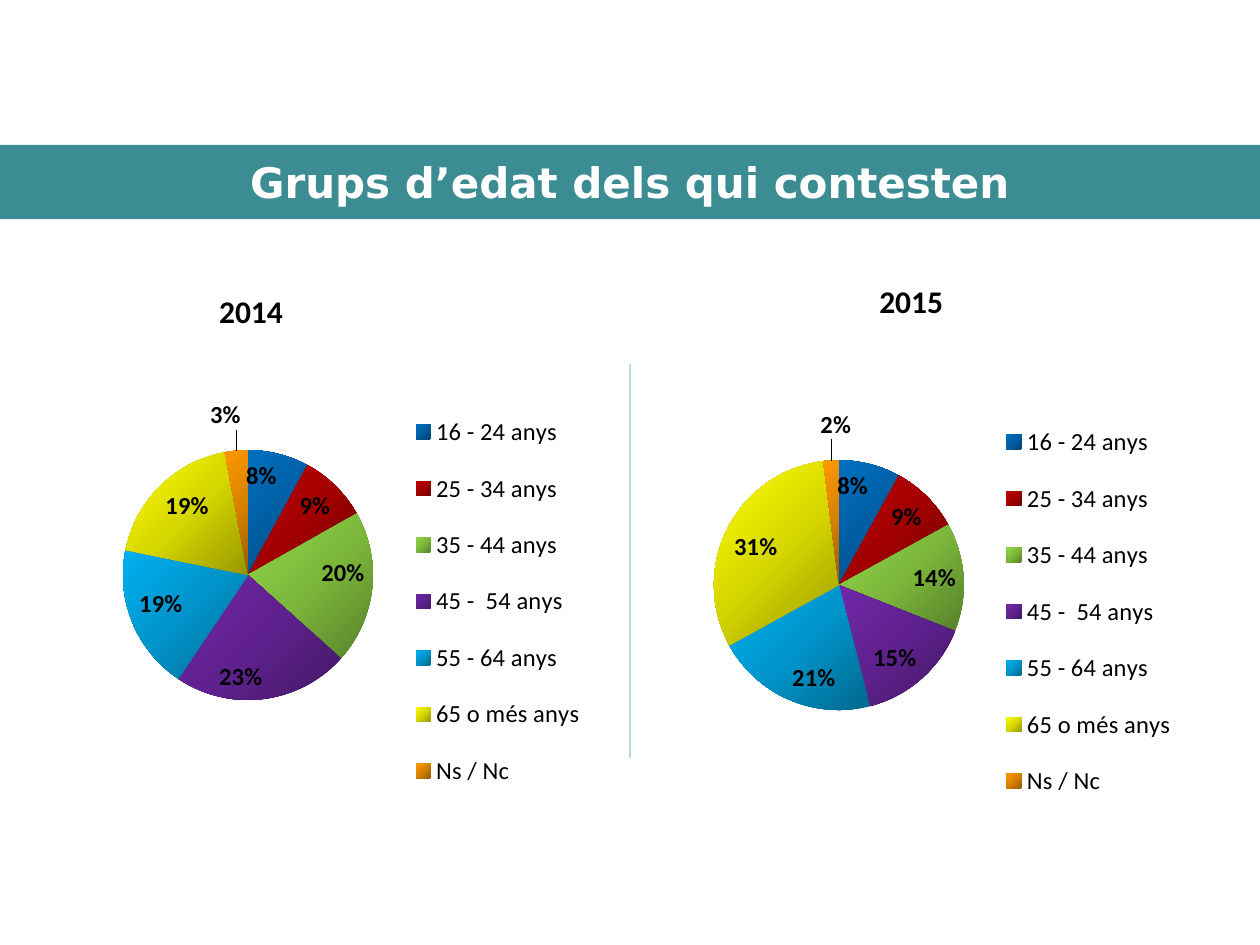
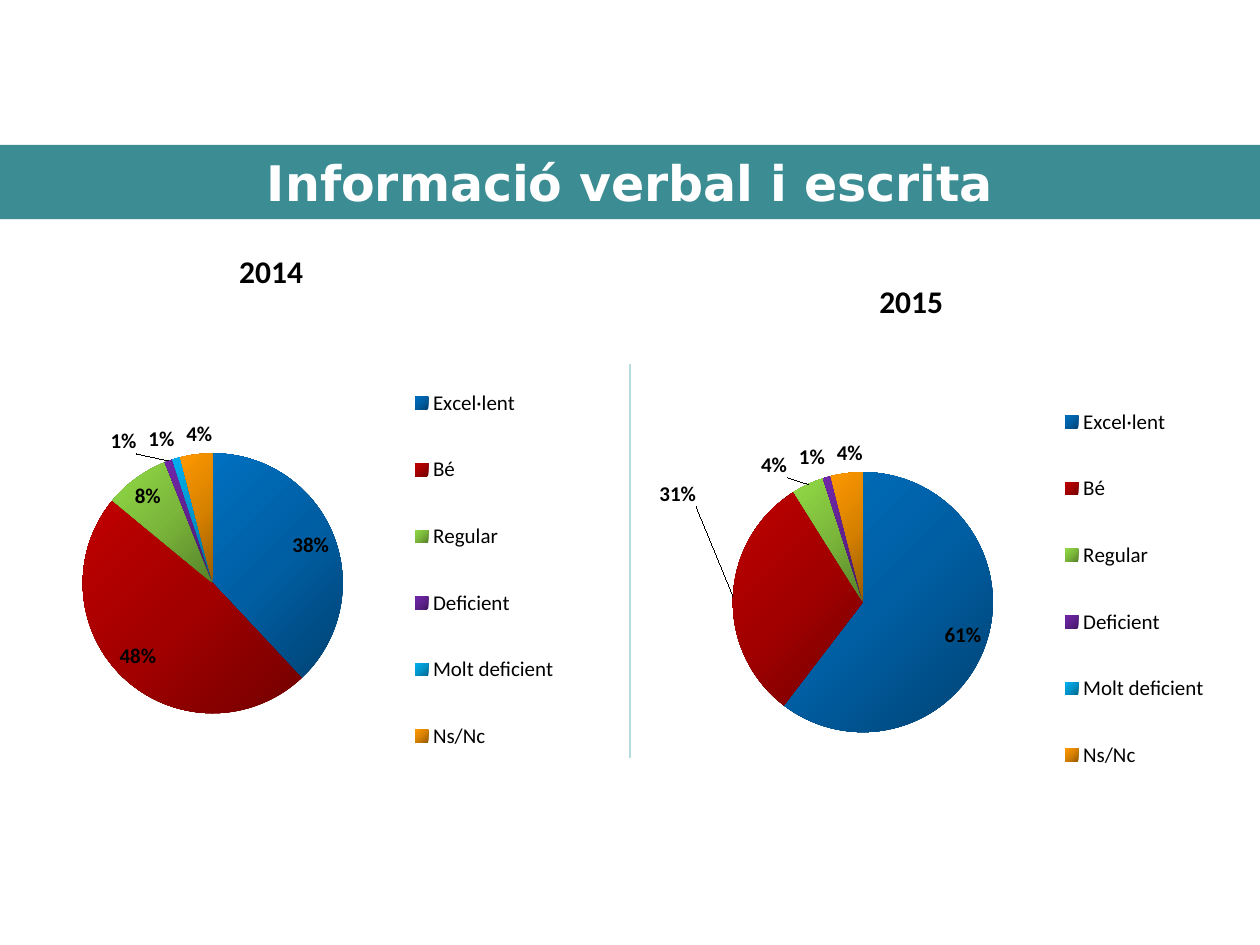
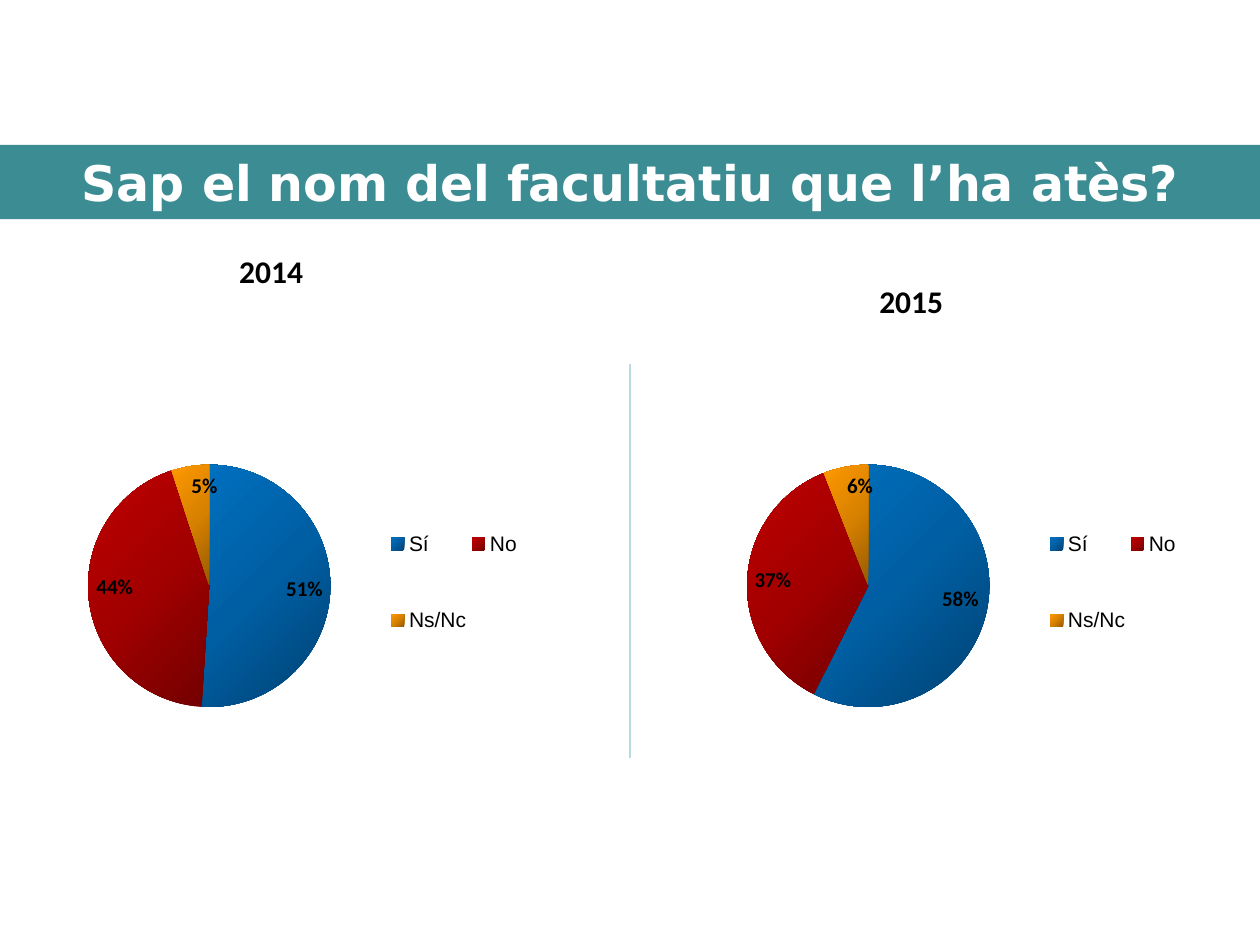
from copy import deepcopy

from pptx import Presentation
from pptx.chart.data import CategoryChartData
from pptx.dml.color import RGBColor
from pptx.enum.chart import XL_CHART_TYPE as CT, XL_LABEL_POSITION as LP, XL_LEGEND_POSITION
from pptx.enum.shapes import MSO_CONNECTOR
from pptx.enum.text import MSO_ANCHOR, MSO_AUTO_SIZE, PP_ALIGN
from pptx.oxml import parse_xml
from pptx.oxml.ns import nsdecls, qn
from pptx.util import Inches, Pt

TEAL = RGBColor(0x3C, 0x8C, 0x93)
PALE_TEAL = RGBColor(0xB6, 0xDC, 0xDF)
WHITE = RGBColor(0xFF, 0xFF, 0xFF)
BLACK = RGBColor(0, 0, 0)

# Slice gradients: dark, middle and light stop
BLUE = [RGBColor(0x00, 0x42, 0x72), RGBColor(0x00, 0x5E, 0xA2), RGBColor(0x00, 0x70, 0xC0)]
RED = [RGBColor(0x72, 0x00, 0x00), RGBColor(0xA2, 0x00, 0x00), RGBColor(0xC0, 0x00, 0x00)]
GREEN = [RGBColor(0x57, 0x81, 0x2A), RGBColor(0x7B, 0xB7, 0x3B), RGBColor(0x92, 0xDA, 0x46)]
PURPLE = [RGBColor(0x43, 0x17, 0x64), RGBColor(0x5F, 0x21, 0x8E), RGBColor(0x71, 0x28, 0xA8)]
SKY = [RGBColor(0x00, 0x68, 0x8E), RGBColor(0x00, 0x94, 0xCA), RGBColor(0x00, 0xB0, 0xF0)]
YELLOW = [RGBColor(0x97, 0x97, 0x00), RGBColor(0xD7, 0xD7, 0x00), RGBColor(0xFF, 0xFF, 0x00)]
ORANGE = [RGBColor(0x97, 0x5B, 0x00), RGBColor(0xD7, 0x81, 0x00), RGBColor(0xFF, 0x99, 0x00)]

SLIDES = [
    {
        "title": "Grups d’edat dels qui contesten",
        "title_size": 24,
        "categories": ["16 - 24 anys", "25 - 34 anys", "35 - 44 anys", "45 -  54 anys",
                       "55 - 64 anys", "65 o més anys", "Ns / Nc"],
        "colors": [BLUE, RED, GREEN, PURPLE, SKY, YELLOW, ORANGE],
        "chart_size": (4.22, 5.23),
        "plot": (0.12, 0.09, 0.47, 0.82),
        "legend": (0.66, 0.22, 0.33, 0.64),
        "legend_font": ("Calibri", 14),
        "label_size": 14,
        "label_position": LP.INSIDE_END,
        "years": [
            {"year": "2014", "year_at": (1.64, 2.27), "chart_at": (0.47, 1.95),
             "values": [8, 9, 20, 23, 19, 19, 3], "moved": {6: (0.01, -0.02)}},
            {"year": "2015", "year_at": (6.88, 2.19), "chart_at": (5.16, 2.03),
             "values": [8, 9, 14, 15, 21, 31, 2], "moved": {6: (0.01, -0.02)}},
        ],
    },
    {
        "title": "Informació verbal i escrita",
        "title_size": 28,
        "categories": ["Excel·lent", "Bé", "Regular", "Deficient", "Molt deficient", "Ns/Nc"],
        "colors": [BLUE, RED, GREEN, PURPLE, SKY, ORANGE],
        "chart_size": (4.69, 5.39),
        "plot": (0.14, 0.12, 0.44, 0.81),
        "legend": (0.69, 0.18, 0.26, 0.65),
        "legend_font": ("Calibri", 12),
        "label_size": 12,
        "label_position": LP.BEST_FIT,
        "years": [
            {"year": "2014", "year_at": (1.8, 1.95), "chart_at": (0, 1.8),
             "values": [38, 48, 8, 1, 1, 4], "moved": {}},
            {"year": "2015", "year_at": (6.88, 2.19), "chart_at": (5.16, 1.95),
             "values": [61, 31, 4, 1, None, 4], "moved": {1: (-0.05, -0.15)}},
        ],
    },
    {
        "title": "Sap el nom del facultatiu que l’ha atès?",
        "title_size": 28,
        "categories": ["Sí", "No", "Ns/Nc"],
        "colors": [BLUE, RED, ORANGE],
        "chart_size": (4.37, 5.7),
        "plot": (0.16, 0.06, 0.44, 0.88),
        "legend": (0.7, 0.35, 0.25, 0.29),
        "legend_font": ("Arial", 12),
        "label_size": 12,
        "label_position": LP.INSIDE_END,
        "years": [
            {"year": "2014", "year_at": (1.8, 1.95), "chart_at": (0, 1.8),
             "values": [51, 44, 5], "moved": {}},
            {"year": "2015", "year_at": (6.88, 2.19), "chart_at": (5.23, 1.8),
             "values": [58, 37, 6], "moved": {}},
        ],
    },
]


def set_font(font, name, size, color=BLACK, bold=False):
    for key, value in {"name": name, "size": Pt(size), "bold": bold}.items():
        setattr(font, key, value)
    font.color.rgb = color


def manual_layout(**values):
    """Return a c:layout element; values are fractions of the chart."""
    items = "".join(f'<c:{key} val="{value}"/>' for key, value in values.items())
    return parse_xml(f'<c:layout {nsdecls("c")}><c:manualLayout>{items}'
                     '</c:manualLayout></c:layout>')


def area_layout(area, **target):
    return manual_layout(**target, xMode="edge", yMode="edge", **dict(zip("xywh", area)))


def drop_layout(element):
    for old in element.findall(qn("c:layout")):
        element.remove(old)


class Deck:
    def __init__(self):
        self.prs = Presentation()
        self.prs.slide_width, self.prs.slide_height = Inches(10), Inches(7.5)
        self.s = None

    def add_slide(self, title, size):
        self.s = self.prs.slides.add_slide(self.prs.slide_layouts[5])
        sp = self.s.shapes.title
        sp.left, sp.top, sp.width, sp.height = map(Inches, (0, 1.15, 10, 0.59))
        sp.fill.solid()
        sp.fill.fore_color.rgb = TEAL
        tf = sp.text_frame
        tf.text = title
        tf.auto_size, tf.vertical_anchor = MSO_AUTO_SIZE.NONE, MSO_ANCHOR.MIDDLE
        p = tf.paragraphs[0]
        p.alignment = PP_ALIGN.CENTER
        set_font(p.runs[0].font, "DejaVu Sans", size, WHITE, True)

    def divider(self):
        line = self.s.shapes.add_connector(MSO_CONNECTOR.STRAIGHT, Inches(5), Inches(2.89),
                                           Inches(5), Inches(6.02))
        line.line.color.rgb = PALE_TEAL
        line.line.width = Pt(0.75)
        line.element.spPr.append(parse_xml(f'<a:effectLst {nsdecls("a")}/>'))

    def year(self, text, at):
        sp = self.s.shapes.add_textbox(*map(Inches, (*at, 1.48, 0.4)))
        tf = sp.text_frame
        tf.word_wrap = True
        tf.auto_size = MSO_AUTO_SIZE.SHAPE_TO_FIT_TEXT
        r = tf.paragraphs[0].add_run()
        r.text = text
        set_font(r.font, "Calibri", 18, bold=True)

    def pie(self, style, at, values, moved):
        data = CategoryChartData()
        data.categories = style["categories"]
        data.add_series("Series 1", values)
        box = map(Inches, (*at, *style["chart_size"]))
        chart = self.s.shapes.add_chart(CT.PIE, *box, data).chart
        chart.has_title = False
        set_font(chart.font, "Arial", 12)
        plot = chart.plots[0]
        plot.vary_by_categories = True
        area = chart.element.find(".//" + qn("c:plotArea"))
        drop_layout(area)
        area.insert(0, area_layout(style["plot"], layoutTarget="inner"))
        self.legend(chart, style)
        self.slices(chart, style["colors"])
        self.labels(plot.series[0], style, moved)

    def legend(self, chart, style):
        chart.has_legend = True
        chart.legend.position = XL_LEGEND_POSITION.RIGHT
        chart.legend.include_in_layout = False
        set_font(chart.legend.font, *style["legend_font"])
        legend = chart.element.find(".//" + qn("c:legend"))
        drop_layout(legend)
        legend.find(qn("c:overlay")).addprevious(area_layout(style["legend"]))

    def slices(self, chart, colors):
        for i, stops in enumerate(colors):
            fill = chart.plots[0].series[0].points[i].format.fill
            fill.gradient()
            fill.gradient_angle = 135
            stop_list = chart.element.findall(".//" + qn("a:gsLst"))[-1]
            stop_list.insert(1, deepcopy(stop_list[0]))
            for stop, color, position in zip(fill.gradient_stops, stops, (0, 0.5, 1)):
                stop.color.rgb = color
                stop.position = position

    def labels(self, series, style, moved):
        """Label the slices; moved maps a slice number to its label's offset."""
        labels = series.data_labels
        for key, value in {"show_value": True, "show_percentage": False,
                           "number_format": '0"%"', "number_format_is_linked": False,
                           "position": LP.BEST_FIT}.items():
            setattr(labels, key, value)
        set_font(labels.font, "Calibri", style["label_size"], bold=True)
        group = labels._element
        shared = [child for child in group if child.tag != qn("c:showLeaderLines")]
        for i, (x, y) in moved.items():
            label = parse_xml(f'<c:dLbl {nsdecls("c")}><c:idx val="{i}"/></c:dLbl>')
            label.append(manual_layout(x=x, y=y))
            label.extend(deepcopy(child) for child in shared)
            group.insert(0, label)
        labels.position = style["label_position"]
        if group.find(qn("c:showLeaderLines")) is None:
            group.append(parse_xml(f'<c:showLeaderLines {nsdecls("c")} val="1"/>'))
        group.find(qn("c:showLeaderLines")).set("val", "1")


def main():
    deck = Deck()
    for style in SLIDES:
        deck.add_slide(style["title"], style["title_size"])
        deck.divider()
        for y in style["years"]:
            deck.pie(style, y["chart_at"], y["values"], y["moved"])
            deck.year(y["year"], y["year_at"])
    deck.prs.save("out.pptx")


if __name__ == "__main__":
    main()
